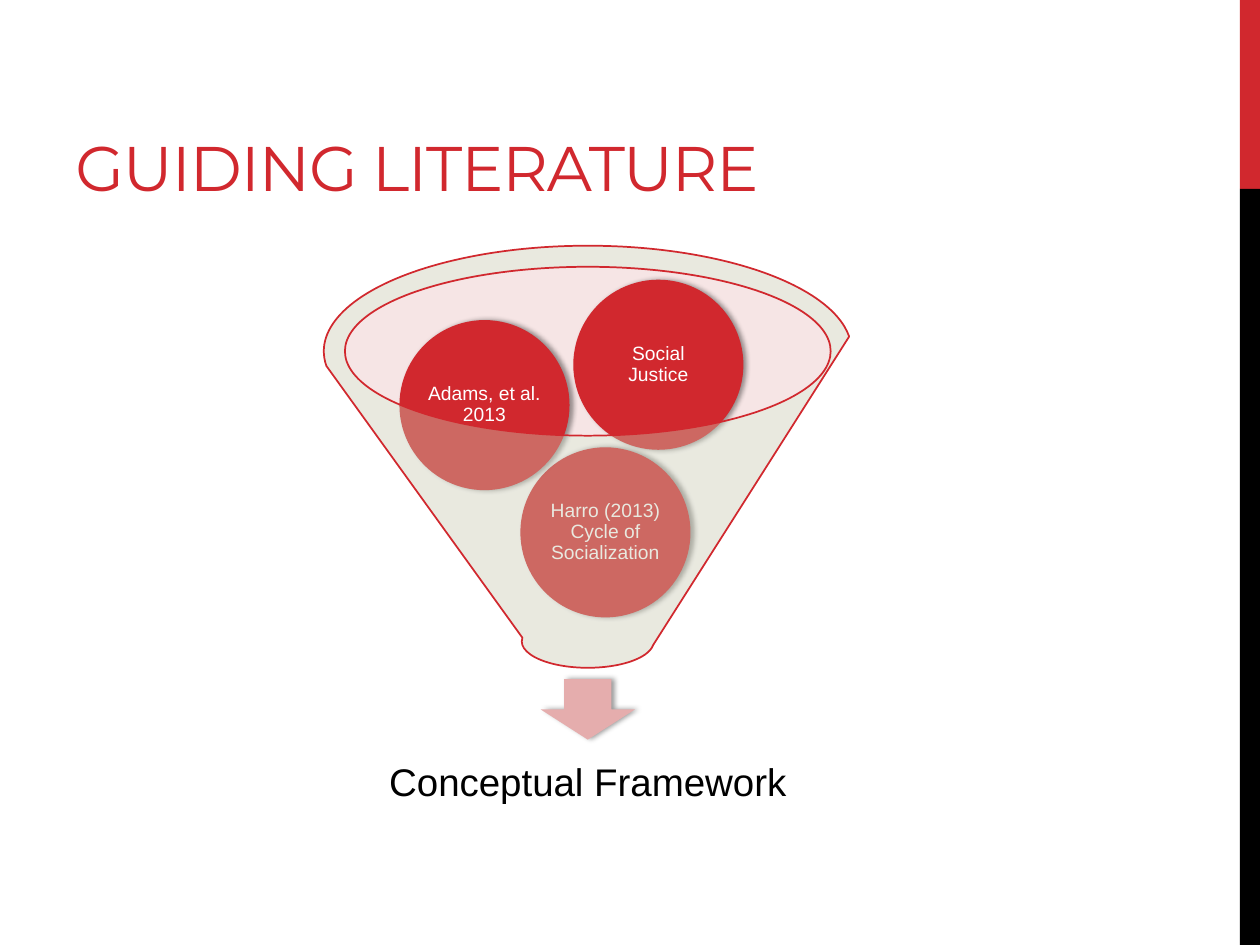
from lxml.etree import SubElement
from pptx import Presentation
from pptx.dml.color import RGBColor
from pptx.enum.shapes import MSO_SHAPE
from pptx.enum.text import MSO_ANCHOR, PP_ALIGN
from pptx.oxml.ns import qn
from pptx.util import Inches, Pt

COLORS = {"red": "D1282E", "black": "000000", "white": "FFFFFF",
          "rim": "E9BEBE", "arrow": "E5ADAD", "funnel": "C8C8B1"}
CIRCLE_SIZE = 1.35
CIRCLES = [("Harro (2013) Cycle of Socialization", 1.56, 1.6),
           ("Adams, et al. 2013", 0.6, 0.59),
           ("Social Justice", 1.98, 0.27)]


def rgb(name):
    """Return the named palette colour."""
    return RGBColor.from_string(COLORS[name])


def set_attributes(target, values):
    """Set every attribute of target listed in values."""
    for name, value in values.items():
        setattr(target, name, value)


def set_alpha(color_parent, percent):
    """Add an opacity to the colour held in an XML element."""
    color = next(color_parent.iter(qn("a:srgbClr")))
    SubElement(color, qn("a:alpha"), val=str(percent * 1000))


def add_shadow(shape):
    """Give a shape a soft black shadow to its right."""
    effects = shape._element.spPr.find(qn("a:effectLst"))
    shadow = SubElement(effects, qn("a:outerShdw"), blurRad=str(Pt(3.1)),
                        dist=str(Pt(1.8)), dir="0", rotWithShape="0")
    SubElement(shadow, qn("a:srgbClr"), val=COLORS["black"])
    set_alpha(shadow, 40)


def add_filled(slide, kind, box, color, opacity=None, line=None):
    """Add a preset shape with a plain fill and an optional outline."""
    shape = slide.shapes.add_shape(kind, *map(Inches, box))
    shape.shadow.inherit = False
    shape.fill.solid()
    shape.fill.fore_color.rgb = rgb(color)
    if opacity is not None:
        set_alpha(shape._element.spPr.find(qn("a:solidFill")), opacity)
    if line:
        shape.line.color.rgb = rgb(line)
        shape.line.width = Pt(1)
    else:
        shape.line.fill.background()
    return shape


def write_text(shape, text, size, color, font="Arial", inset=None,
               anchor=MSO_ANCHOR.MIDDLE, **paragraph_format):
    """Write one formatted paragraph into a shape and return its run."""
    frame = shape.text_frame
    set_attributes(frame, {"word_wrap": True, "vertical_anchor": anchor})
    if inset is not None:
        sides = ("left", "top", "right", "bottom")
        set_attributes(frame, {f"margin_{side}": Inches(inset) for side in sides})
    paragraph = frame.paragraphs[0]
    set_attributes(paragraph, paragraph_format)
    run = paragraph.add_run()
    run.text = text
    set_attributes(run.font, {"name": font, "size": Pt(size)})
    run.font.color.rgb = rgb(color)
    return run


def add_side_bar(slide, left, top, width, height):
    """Draw the red and black bar along the slide edge."""
    red_height = height / 5
    add_filled(slide, MSO_SHAPE.RECTANGLE, (left, top, width, red_height), "red")
    add_filled(slide, MSO_SHAPE.RECTANGLE,
               (left, top + red_height, width, height - red_height), "black")


def add_title(slide, left, top, width, height):
    """Place the slide title."""
    title = slide.shapes.add_textbox(*map(Inches, (left, top, width, height)))
    run = write_text(title, "GUIDING LITERATURE", 36, "red", "Montserrat",
                     anchor=MSO_ANCHOR.BOTTOM)
    run.font._element.set("spc", "-60")


def add_funnel(slide, left, top, width):
    """Draw the funnel, the sources inside it and its outcome."""
    centered = {"alignment": PP_ALIGN.CENTER, "line_spacing": 0.9}

    def centered_box(offset, part_width, part_height):
        """Return a box centred across the funnel."""
        return left + (width - part_width) / 2, top + offset, part_width, part_height

    add_filled(slide, MSO_SHAPE.OVAL, centered_box(0.16, 3.86, 1.34), "rim", 40)
    arrow = add_filled(slide, MSO_SHAPE.DOWN_ARROW,
                       centered_box(3.44, 0.75, 0.48), "arrow")
    add_shadow(arrow)
    outcome = slide.shapes.add_textbox(*map(Inches, centered_box(3.82, 3.59, 0.9)))
    write_text(outcome, "Conceptual Framework", 22, "black", inset=0.17, **centered)
    for text, across, down in CIRCLES:
        box = (left + across, top + down, CIRCLE_SIZE, CIRCLE_SIZE)
        circle = add_filled(slide, MSO_SHAPE.OVAL, box, "red")
        add_shadow(circle)
        write_text(circle, text, 11, "white", inset=0.02, **centered)
    add_filled(slide, MSO_SHAPE.FUNNEL, (left, top, width, 3.35), "funnel", 40, "red")


def main():
    """Build and save the presentation."""
    presentation = Presentation()
    set_attributes(presentation, {"slide_width": Inches(10), "slide_height": Inches(7.5)})
    slide = presentation.slides.add_slide(presentation.slide_layouts[6])
    add_side_bar(slide, 9.84, 0, 0.16, 7.5)
    add_title(slide, 0.5, 0.17, 6.33, 1.5)
    add_funnel(slide, 2.57, 1.95, 4.19)
    presentation.save("out.pptx")


if __name__ == "__main__":
    main()
